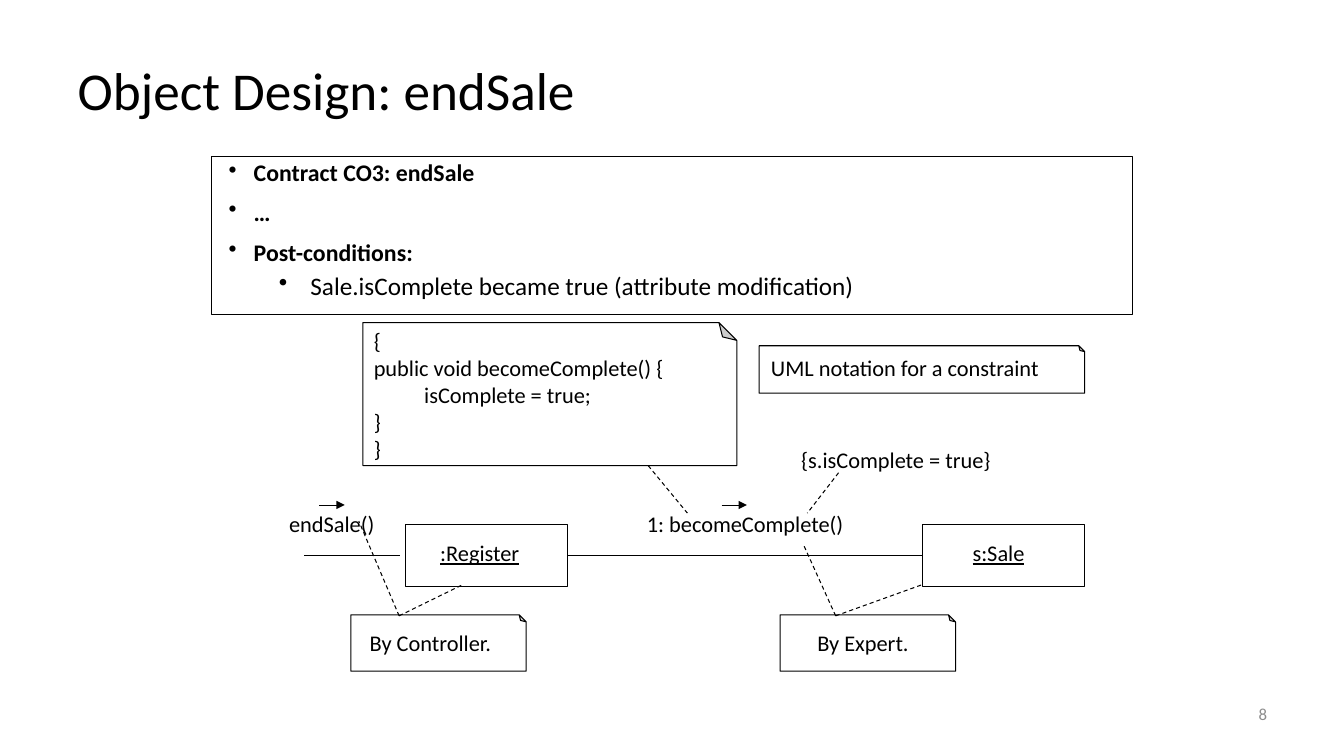
from dataclasses import dataclass

from lxml import etree
from pptx import Presentation
from pptx.dml.color import RGBColor
from pptx.enum import dml, shapes, text
from pptx.oxml import ns
from pptx.util import Pt

BLACK = RGBColor(0, 0, 0)
WHITE = RGBColor(255, 255, 255)
GREY = RGBColor(0x8C, 0x8C, 0x8C)
FONT = "Calibri"


@dataclass(frozen=True)
class Box:
    left: float
    top: float
    width: float
    height: float

    def lengths(self):
        return Pt(self.left), Pt(self.top), Pt(self.width), Pt(self.height)


@dataclass(frozen=True)
class Label:
    box: Box
    wording: str
    underline: bool = False


@dataclass(frozen=True)
class Line:
    start: tuple[float, float]
    end: tuple[float, float]
    width: float = 0.75
    dashed: bool = False
    arrow: bool = False


@dataclass(frozen=True)
class Bullet:
    wording: str
    level: int = 0


CONTRACT_FRAME = Box(151.2, 111.6, 658.1, 113)
REGISTER = Box(289.4, 374.4, 116, 44.6)
SALE = Box(658.8, 374.4, 116, 44.6)

NOTES = [
    Box(557.3, 439.2, 125.3, 40.3),
    Box(250.6, 439.2, 125.3, 40.3),
    Box(259.2, 230.4, 267.1, 102.2),
    Box(542.2, 247, 232.6, 33.8),
]

LABELS = [
    Label(Box(307.4, 381.6, 72, 26.6), ":Register", True),
    Label(Box(687.6, 381.6, 51.8, 26.6), "s:Sale", True),
    Label(Box(199.4, 360.7, 76.3, 26.6), "endSale()"),
    Label(Box(455, 360.7, 157, 26.6), "1: becomeComplete()"),
    Label(Box(576.7, 445.7, 80.6, 26.6), "By Expert."),
    Label(Box(257, 445.7, 103, 26.6), "By Controller."),
    Label(Box(259.9, 230.4, 223.9, 104.4),
          "{\npublic void becomeComplete() {\n\tisComplete = true;\n}\n}"),
    Label(Box(543.6, 249.1, 208.1, 26.6), "UML notation for a constraint"),
    Label(Box(565.2, 315.4, 151.2, 26.6), "{s.isComplete = true}"),
]

EXPERT_TIP = (596.9, 439.9)
CONTROLLER_TIP = (285.1, 439.9)
LINES = [
    # Message arrows and the incoming message
    Line((515.5, 360.7), (533.5, 360.7), width=0.25, arrow=True),
    Line((228.2, 360.7), (246.2, 360.7), width=0.25, arrow=True),
    Line((217.4, 396.7), (285.8, 396.7)),
    # Note anchors
    Line(EXPERT_TIP, (658.8, 417.6), dashed=True),
    Line(EXPERT_TIP, (573.8, 388.8), dashed=True),
    Line(CONTROLLER_TIP, (256.3, 372.2), dashed=True),
    Line(CONTROLLER_TIP, (330.5, 417.6), dashed=True),
    Line((463, 332.6), (491, 366.5), dashed=True),
    Line((599, 337.7), (576.7, 366.5), dashed=True),
]

BULLETS = [
    Bullet("Contract CO3: endSale"),
    Bullet("…"),
    Bullet("Post-conditions:"),
    Bullet("Sale.isComplete became true (attribute modification)", 1),
]


def style_font(paragraph, size: float, color: RGBColor = BLACK) -> None:
    paragraph.font.name = FONT
    paragraph.font.size = Pt(size)
    paragraph.font.color.rgb = color


def add_outline(slide, box: Box, kind=shapes.MSO_SHAPE.RECTANGLE):
    shape = slide.shapes.add_shape(kind, *box.lengths())
    shape.shadow.inherit = False
    shape.fill.background()
    shape.line.color.rgb = BLACK
    shape.line.width = Pt(0.75)
    return shape


def add_note(slide, box: Box) -> None:
    shape = add_outline(slide, box, shapes.MSO_SHAPE.FOLDED_CORNER)
    shape.fill.solid()
    shape.fill.fore_color.rgb = WHITE
    properties = shape.element.spPr
    properties.find(ns.qn("a:xfrm")).set("flipV", "1")
    # Fold size: one eighth of the shorter side
    geometry = properties.find(ns.qn("a:prstGeom"))
    for values in geometry.findall(ns.qn("a:avLst")):
        geometry.remove(values)
    values = etree.SubElement(geometry, ns.qn("a:avLst"))
    etree.SubElement(values, ns.qn("a:gd"), name="adj", fmla="val 12500")


def add_label(slide, label: Label) -> None:
    frame = slide.shapes.add_textbox(*label.box.lengths()).text_frame
    frame.word_wrap = False
    frame.auto_size = text.MSO_AUTO_SIZE.SHAPE_TO_FIT_TEXT
    frame.text = label.wording
    for paragraph in frame.paragraphs:
        style_font(paragraph, 16)
        if label.underline:
            paragraph.font.underline = True


def add_line(slide, line: Line):
    connector = slide.shapes.add_connector(
        shapes.MSO_CONNECTOR.STRAIGHT,
        *(Pt(value) for value in line.start + line.end))
    connector.line.color.rgb = BLACK
    connector.line.width = Pt(line.width)
    if line.dashed:
        connector.line.dash_style = dml.MSO_LINE.DASH
    properties = connector.element.spPr
    if line.arrow:
        etree.SubElement(properties.find(ns.qn("a:ln")), ns.qn("a:tailEnd"), type="triangle")
    etree.SubElement(properties, ns.qn("a:effectLst"))
    return connector


def add_bullet(paragraph, bullet: Bullet) -> None:
    paragraph.text = bullet.wording
    paragraph.level = bullet.level
    paragraph.line_spacing = 0.9
    paragraph.space_before = Pt(5 if bullet.level else 10)
    style_font(paragraph, 18 if bullet.level else 17)
    paragraph.font.bold = bullet.level == 0
    margin, indent = (58.5, -22.5) if bullet.level else (18, -18)
    properties = paragraph._p.get_or_add_pPr()
    properties.set("marL", str(Pt(margin)))
    properties.set("indent", str(Pt(indent)))
    mark = etree.Element(ns.qn("a:buChar"), char="•")
    properties.find(ns.qn("a:defRPr")).addprevious(mark)


def add_title(slide) -> None:
    title = slide.shapes.title
    title.left, title.top, title.width, title.height = Box(48.2, 21.6, 864, 90).lengths()
    frame = title.text_frame
    frame.text = "Object Design: endSale"
    frame.vertical_anchor = text.MSO_ANCHOR.MIDDLE
    paragraph = frame.paragraphs[0]
    paragraph.alignment = text.PP_ALIGN.LEFT
    paragraph.line_spacing = 0.9
    style_font(paragraph, 38)


def add_contract(slide) -> None:
    frame = slide.shapes.add_textbox(*Box(156.2, 111.6, 648, 172).lengths()).text_frame
    frame.word_wrap = True
    for index, bullet in enumerate(BULLETS):
        add_bullet(frame.add_paragraph() if index else frame.paragraphs[0], bullet)
    add_outline(slide, CONTRACT_FRAME)


def add_page_number(slide) -> None:
    frame = slide.shapes.add_textbox(*Box(688.3, 491.8, 223.9, 36).lengths()).text_frame
    frame.word_wrap = True
    frame.vertical_anchor = text.MSO_ANCHOR.MIDDLE
    frame.text = "8"
    frame.paragraphs[0].alignment = text.PP_ALIGN.RIGHT
    style_font(frame.paragraphs[0], 12, GREY)


def main() -> None:
    presentation = Presentation()
    presentation.slide_width, presentation.slide_height = Pt(960), Pt(540)
    slide = presentation.slides.add_slide(presentation.slide_layouts[5])
    add_title(slide)
    add_contract(slide)
    # Collaborating objects and their link
    register, sale = add_outline(slide, REGISTER), add_outline(slide, SALE)
    link = add_line(slide, Line((405.4, 396.7), (658.8, 396.7)))
    link.begin_connect(register, 3)
    link.end_connect(sale, 1)
    # Notes, wording and lines
    for note in NOTES:
        add_note(slide, note)
    for label in LABELS:
        add_label(slide, label)
    for line in LINES:
        add_line(slide, line)
    add_page_number(slide)
    presentation.save("out.pptx")


if __name__ == "__main__":
    main()
